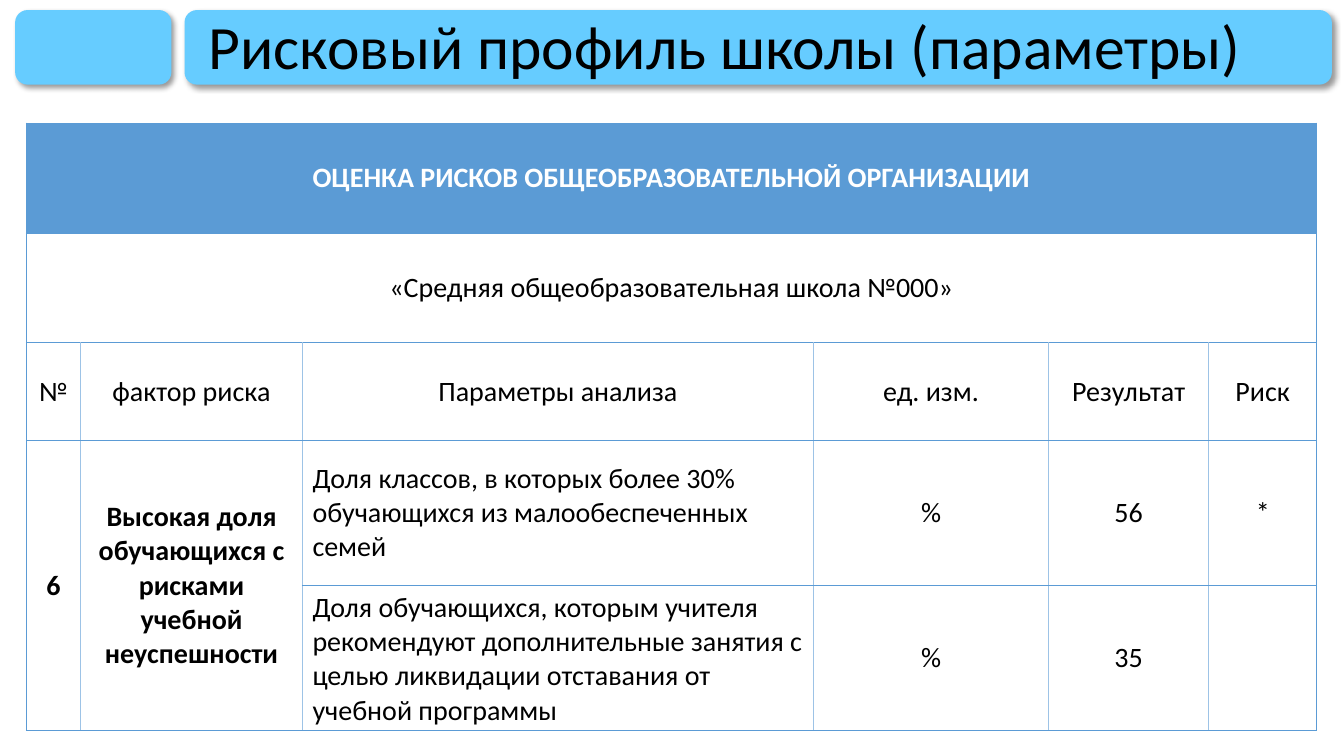
from itertools import accumulate

from lxml.etree import SubElement
from pptx import Presentation
from pptx.dml.color import RGBColor
from pptx.enum.shapes import MSO_SHAPE
from pptx.enum.text import MSO_ANCHOR, PP_ALIGN
from pptx.oxml.ns import qn
from pptx.util import Inches, Pt

COLORS = {"bar": "66CCFF", "head": "5B9BD5", "edge": "5B9BD5",
          "inner": "9DC3E6", "text": "000000", "white": "FFFFFF"}
FONT = "Calibri"
PLAIN_STYLE = "{2D5ABB26-0587-4C30-8999-92F81FD0307C}"
COLS = [0.54, 2.2, 5.07, 2.33, 1.59, 1.07]
ROWS = [1.09, 1.09, 0.97, 1.44, 1.44]
CELLS = [
    ["ОЦЕНКА РИСКОВ ОБЩЕОБРАЗОВАТЕЛЬНОЙ ОРГАНИЗАЦИИ"],
    ["«Средняя общеобразовательная школа №000»"],
    ["№", "фактор риска", "Параметры анализа", "ед. изм.", "Результат", "Риск"],
    ["6", "Высокая доля обучающихся с рисками учебной неуспешности",
     "Доля классов, в которых более 30% обучающихся из малообеспеченных семей",
     "%", "56", "*"],
    ["", "", "Доля обучающихся, которым учителя рекомендуют дополнительные "
     "занятия с целью ликвидации отставания от учебной программы",
     "%", "35", ""],
]
MERGES = [(0, 0, 0, 5), (1, 0, 1, 5), (3, 0, 4, 0), (3, 1, 4, 1)]


def color(name):
    return RGBColor.from_string(COLORS[name])


def style(par, size, name, bold=False):
    for run in par.runs:
        run.font.name = FONT
        run.font.size = Pt(size)
        run.font.bold = bold
        run.font.color.rgb = color(name)


def add_bar(slide, left, top, width, height):
    """Draw a rounded bar with a soft shadow to the lower right."""
    bar = slide.shapes.add_shape(MSO_SHAPE.ROUNDED_RECTANGLE, Inches(left),
                                 Inches(top), Inches(width), Inches(height))
    bar.fill.solid()
    bar.fill.fore_color.rgb = color("bar")
    bar.line.fill.background()
    bar.shadow.inherit = False
    effects = bar._element.spPr.find(qn("a:effectLst"))
    shade = SubElement(effects, qn("a:outerShdw"), blurRad=str(Pt(4)),
                       dist=str(Pt(3)), dir=str(45 * 60000), algn="tl",
                       rotWithShape="0")
    tint = SubElement(shade, qn("a:srgbClr"), val=COLORS["text"])
    SubElement(tint, qn("a:alpha"), val="40000")


def add_header(slide, left, top, width, height):
    """Place the small bar, the wide bar and the title on it."""
    small, gap = 1.55, 0.13
    start = left + small + gap
    add_bar(slide, left, top, small, height)
    add_bar(slide, start, top, width - small - gap, height)
    box = slide.shapes.add_textbox(Inches(start + 0.14), Inches(top + 0.06),
                                   Inches(11.1), Inches(0.66))
    frame = box.text_frame
    frame.word_wrap = True
    frame.vertical_anchor = MSO_ANCHOR.MIDDLE
    frame.text = "Рисковый профиль школы (параметры)"
    frame.paragraphs[0].line_spacing = 0.9
    style(frame.paragraphs[0], 44, "text")


def add_borders(cell, first, last):
    """Frame a cell; first and last tell if it touches the table's sides."""
    outer, inner = ("edge", 0.5), ("inner", 1)
    sides = {"lnL": outer if first else inner,
             "lnR": outer if last else inner, "lnT": outer, "lnB": outer}
    props = cell._tc.get_or_add_tcPr()
    for side, (name, width) in sides.items():
        line = SubElement(props, qn("a:" + side), w=str(Pt(width)))
        fill = SubElement(line, qn("a:solidFill"))
        SubElement(fill, qn("a:srgbClr"), val=COLORS[name])


def fill_cell(cell, text, row, col):
    head = row == 0
    add_borders(cell, col == 0, col + cell.span_width == len(COLS))
    if head:
        cell.fill.solid()
        cell.fill.fore_color.rgb = color("head")
    else:
        cell.fill.background()
    cell.vertical_anchor = MSO_ANCHOR.MIDDLE
    cell.text = text
    par = cell.text_frame.paragraphs[0]
    left = row > 2 and col == 2
    par.alignment = PP_ALIGN.LEFT if left else PP_ALIGN.CENTER
    style(par, 20, "white" if head else "text", head or row == 3 and col < 2)


def add_risks(slide, left, top):
    """Place the risk table with its top left corner at the given point."""
    width, height = list(accumulate(COLS))[-1], list(accumulate(ROWS))[-1]
    frame = slide.shapes.add_table(len(ROWS), len(COLS), Inches(left),
                                   Inches(top), Inches(width), Inches(height))
    table = frame.table
    table.first_row = table.horz_banding = False
    table._tbl.tblPr.find(qn("a:tableStyleId")).text = PLAIN_STYLE
    for column, size in zip(table.columns, COLS):
        column.width = Inches(size)
    for row, size in zip(table.rows, ROWS):
        row.height = Inches(size)
    for top_row, first, end_row, last in MERGES:
        table.cell(top_row, first).merge(table.cell(end_row, last))
    for row, texts in enumerate(CELLS):
        for col, text in enumerate(texts):
            cell = table.cell(row, col)
            if not cell.is_spanned:
                fill_cell(cell, text, row, col)


def main():
    deck = Presentation()
    deck.slide_width, deck.slide_height = Inches(13.33), Inches(7.5)
    slide = deck.slides.add_slide(deck.slide_layouts[6])
    add_header(slide, 0.15, 0.1, 13.06, 0.74)
    add_risks(slide, 0.26, 1.22)
    deck.save("out.pptx")


if __name__ == "__main__":
    main()
